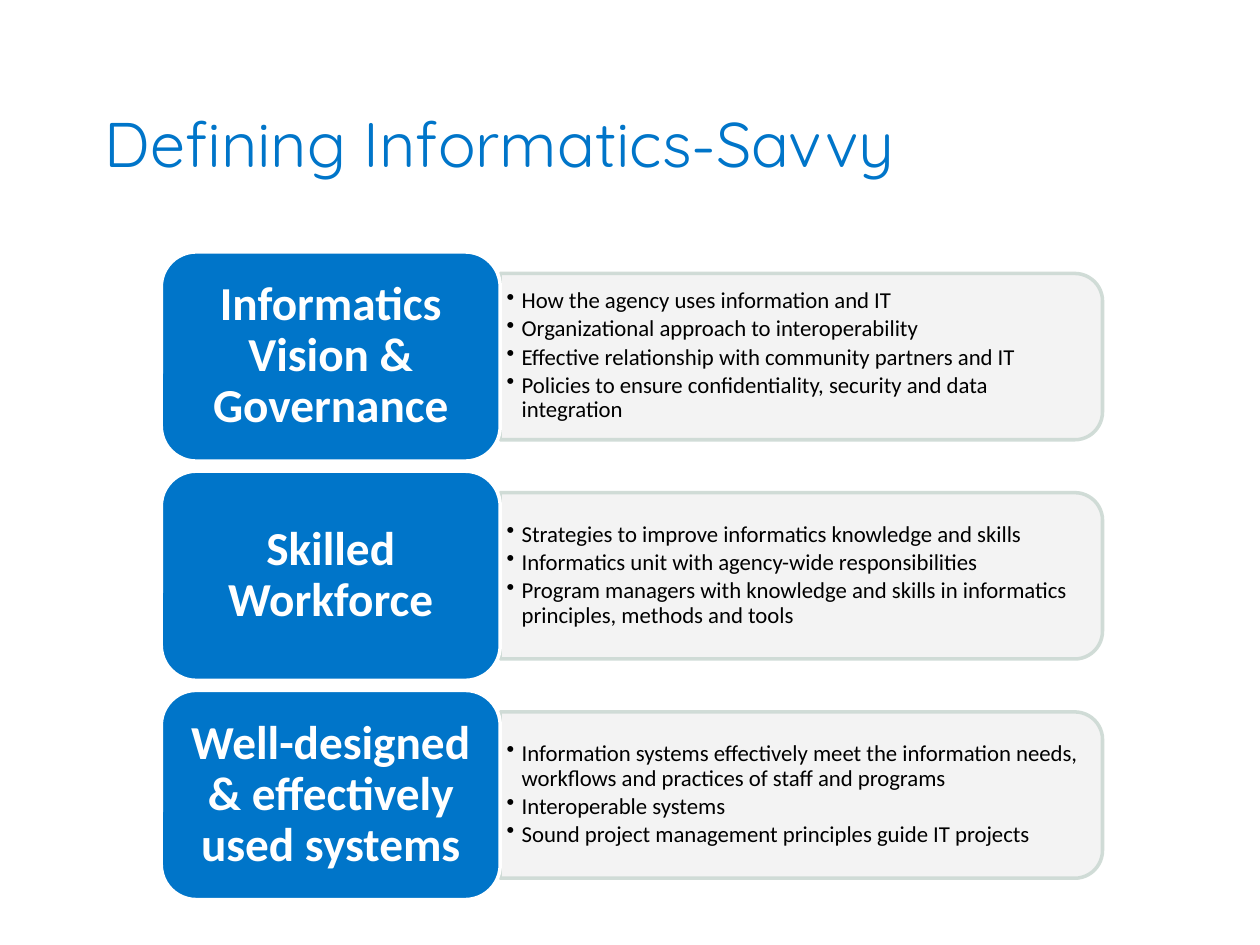
import pptx
import pptx.util
import pptx.dml.color
import pptx.enum.shapes
import pptx.enum.text
import pptx.oxml.ns
from lxml import etree

Inches = pptx.util.Inches
Pt = pptx.util.Pt
SHAPE = pptx.enum.shapes.MSO_SHAPE
ALIGN = pptx.enum.text.PP_ALIGN
ANCHOR = pptx.enum.text.MSO_ANCHOR
qn = pptx.oxml.ns.qn

BLUE, WHITE, BLACK = "0075C9", "FFFFFF", "000000"
PANEL, EDGE = "F2F2F2", "CCD9D3"

ROWS = [
    ("Informatics Vision & Governance", [
        "How the agency uses information and IT",
        "Organizational approach to interoperability",
        "Effective relationship with community partners and IT",
        "Policies to ensure confidentiality, security and data integration",
    ]),
    ("Skilled Workforce", [
        "Strategies to improve informatics knowledge and skills",
        "Informatics unit with agency-wide responsibilities",
        "Program managers with knowledge and skills in informatics "
        "principles, methods and tools",
    ]),
    ("Well-designed & effectively used systems", [
        "Information systems effectively meet the information needs, "
        "workflows and practices of staff and programs",
        "Interoperable systems",
        "Sound project management principles guide IT projects",
    ]),
]


def color(text):
    return pptx.dml.color.RGBColor.from_string(text)


def style(par, size, face, tint, bold=False):
    for run in par.runs:
        font = run.font
        font.size, font.name, font.bold = Pt(size), face, bold
        font.color.rgb = color(tint)


def inset(frame, side, end):
    frame.word_wrap = True
    frame.vertical_anchor = ANCHOR.MIDDLE
    frame.margin_left = frame.margin_right = Inches(side)
    frame.margin_top = frame.margin_bottom = Inches(end)


def block(slide, kind, box, fill, line):
    shape = slide.shapes.add_shape(kind, *map(Inches, box))
    shape.shadow.inherit = False
    shape.fill.solid()
    shape.fill.fore_color.rgb = color(fill)
    shape.line.color.rgb = color(line)
    shape.line.width = Pt(2)
    return shape


def fade(shape, percent):
    for tint in shape.element.spPr.iter(qn("a:srgbClr")):
        etree.SubElement(tint, qn("a:alpha"), val=str(percent * 1000))


def bullet(par):
    props = par._p.get_or_add_pPr()
    props.set("marL", str(Inches(0.12)))
    props.set("indent", str(Inches(-0.12)))
    etree.SubElement(props, qn("a:buChar"), char="•")


def add_title(slide, text, box):
    title = slide.shapes.title
    title.left, title.top, title.width, title.height = map(Inches, box)
    frame = title.text_frame
    frame.text = text
    frame.auto_size = pptx.enum.text.MSO_AUTO_SIZE.NONE
    frame.vertical_anchor = ANCHOR.BOTTOM
    par = frame.paragraphs[0]
    par.alignment = ALIGN.LEFT
    par.line_spacing = Pt(38)
    style(par, 36, "Quicksand", BLUE)


def add_panel(slide, items, box):
    left, top, width, height = box
    # Turned a quarter so that the rounded corners face right
    turned = (left + (width - height) / 2, top + (height - width) / 2,
              height, width)
    shape = block(slide, SHAPE.ROUND_2_SAME_RECTANGLE, turned, PANEL, EDGE)
    shape.rotation = 90
    fade(shape, 90)

    # Upright text over the turned panel
    area = (left, top + 0.06, width - 0.07, height - 0.13)
    frame = slide.shapes.add_textbox(*map(Inches, area)).text_frame
    inset(frame, 0.05, 0.03)
    frame.text = "\n".join(items)
    for par in frame.paragraphs:
        bullet(par)
        par.level = 1
        par.alignment = ALIGN.LEFT
        par.line_spacing = 0.9
        par.space_after = Pt(2)
        style(par, 13, "Calibri", BLACK)


def add_label(slide, text, box):
    shape = block(slide, SHAPE.ROUNDED_RECTANGLE, box, BLUE, WHITE)
    frame = shape.text_frame
    inset(frame, 0.11, 0.06)
    frame.text = text
    par = frame.paragraphs[0]
    par.alignment = ALIGN.CENTER
    par.line_spacing = 0.9
    style(par, 27, "Calibri", WHITE, True)


def add_row(slide, label, items, box):
    left, top, width, height = box
    wide, pad = 2.69, 0.17
    add_panel(slide, items,
              (left + wide, top + pad, width - wide, height - 2 * pad))
    add_label(slide, label, (left, top, wide, height))


def main():
    deck = pptx.Presentation()
    deck.slide_width, deck.slide_height = Inches(10), Inches(7.5)
    slide = deck.slides.add_slide(deck.slide_layouts[5])
    add_title(slide, "Defining Informatics-Savvy", (0.73, 0.38, 8.75, 1.1))

    # Three equal rows
    for i, (label, items) in enumerate(ROWS):
        add_row(slide, label, items, (1.28, 2 + i * 1.74, 7.47, 1.66))
    deck.save("out.pptx")


if __name__ == "__main__":
    main()
